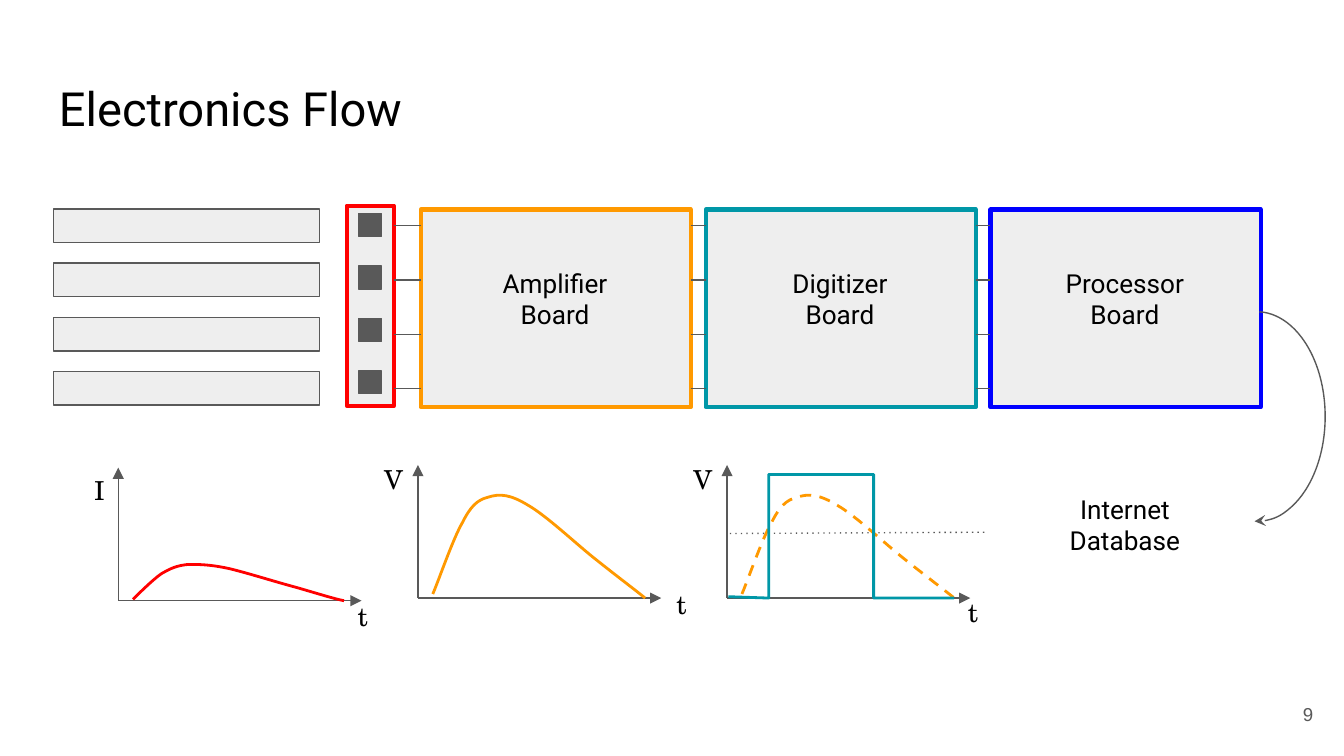
from pptx import Presentation
from pptx.dml.color import RGBColor as RGB
from pptx.enum.shapes import MSO_CONNECTOR as Link, MSO_SHAPE as Kind
from pptx.enum.text import MSO_ANCHOR as Anchor, PP_ALIGN as Align
from pptx.oxml.ns import qn
from pptx.util import Inches, Pt
from lxml import etree

THEME = {
    "ink": "000000", "gray": "595959", "pale": "EEEEEE",
    "red": "FF0000", "gold": "FF9900", "teal": "0097A7", "blue": "0000FF",
    "thin": 0.75, "curve": 1.5, "thick": 2.25,
    "title": {"name": "Roboto", "size": 25.2, "color": "ink", "align": Align.LEFT},
    "body": {"name": "Roboto", "size": 14, "color": "ink", "align": Align.CENTER},
    "axis": {"name": "TeX Gyre Schola", "size": 14, "color": "ink", "align": Align.CENTER},
    "page": {"name": "Arial", "size": 10, "color": "gray", "align": Align.RIGHT},
}
FRAME = {"word_wrap": True, **{
    f"margin_{side}": Inches(0.1) for side in ("left", "top", "right", "bottom")}}

TEXTS = [
    ("Electronics Flow", "title", (0.34, 0.49, 9.32, 0.63), Anchor.TOP),
    ("9", "page", (9.27, 5.1, 0.6, 0.43), Anchor.MIDDLE),
    ("Internet Database", "body", (7.86, 3.57, 1.02, 0.99), Anchor.TOP),
]
BOARDS = [("Amplifier Board", "gold"), ("Digitizer Board", "teal"), ("Processor Board", "blue")]
PLOTS = [
    {"at": (0.88, 4.47), "name": "I", "name_at": (0.6, 3.44), "time_at": (2.56, 4.38)},
    {"at": (3.11, 4.45), "name": "V", "name_at": (2.76, 3.36), "time_at": (4.93, 4.29)},
    {"at": (5.41, 4.45), "name": "V", "name_at": (5.06, 3.36), "time_at": (7.1, 4.35)},
]
LOW = [
    (0.99, 4.46), (1.02, 4.43), (1.13, 4.32), (1.2, 4.27),
    (1.27, 4.23), (1.31, 4.21), (1.4, 4.2), (1.48, 4.2), (1.56, 4.2), (1.7, 4.23),
    (1.83, 4.26), (2.05, 4.33), (2.2, 4.37), (2.34, 4.41), (2.5, 4.46), (2.56, 4.47),
]
HIGH = [
    (3.22, 4.42), (3.26, 4.33), (3.37, 4.01), (3.44, 3.89),
    (3.5, 3.77), (3.55, 3.72), (3.63, 3.7), (3.72, 3.67), (3.8, 3.68), (3.93, 3.76),
    (4.07, 3.84), (4.29, 4.05), (4.43, 4.16), (4.58, 4.28), (4.74, 4.4), (4.8, 4.45),
]
SHIFT = 2.3
PULSE = [(5.42, 4.44), (5.72, 4.45), (5.72, 3.53), (6.5, 3.53), (6.5, 4.45), (7.1, 4.45)]

ROWS = [1.68 + 1.21 / 3 * i for i in range(4)]
BAR = (0.4, 1.98, 0.25)
SENSOR = (2.58, 1.53, 0.35, 1.49)
CHIP = (2.67, 1.59, 0.17, 0.39)
BOARD = (3.13, 1.56, 2.01, 1.47)
STEP = 2.12

deck = Presentation()
deck.slide_width = Inches(10)
deck.slide_height = deck.slide_width * 9 // 16
slide = deck.slides.add_slide(deck.slide_layouts[6])
shapes = slide.shapes


def tint(name):
    return RGB.from_string(THEME[name])


def stroke(item, color, width, dash=None, tip=None):
    item.line.color.rgb = tint(color)
    item.line.width = Pt(THEME[width])
    line = item.line._get_or_add_ln()
    if dash:
        etree.SubElement(line, qn("a:prstDash"), val=dash)
    if tip:
        etree.SubElement(line, qn("a:tailEnd"), type=tip)


def block(box, fill, color, width, kind=Kind.RECTANGLE, tip=None):
    item = shapes.add_shape(kind, *map(Inches, box))
    item.shadow.inherit = False
    if fill:
        item.fill.solid()
        item.fill.fore_color.rgb = tint(fill)
    else:
        item.fill.background()
    stroke(item, color, width, tip=tip)
    return item


def wire(start, end, dash=None, tip=None):
    item = shapes.add_connector(Link.STRAIGHT, *map(Inches, start + end))
    stroke(item, "gray", "thin", dash, tip)
    etree.SubElement(item._element.spPr, qn("a:effectLst"))


def trace(points, color, dash=None, curved=True):
    spots = [(Inches(x), Inches(y)) for x, y in points]
    build = shapes.build_freeform(*spots[0])
    build.add_line_segments(spots[1:], close=False)
    item = build.convert_to_shape()
    item.shadow.inherit = False
    item.fill.background()
    stroke(item, color, "curve", dash)
    if curved:
        route = next(item._element.iter(qn("a:path")))
        legs = route.findall(qn("a:lnTo"))
        for i in range(0, len(legs), 3):
            bend = etree.SubElement(route, qn("a:cubicBezTo"))
            for leg in legs[i:i + 3]:
                bend.append(leg[0])
                route.remove(leg)


def label(text, style, box, anchor=Anchor.TOP):
    frame = shapes.add_textbox(*map(Inches, box)).text_frame
    for key, value in {**FRAME, "vertical_anchor": anchor}.items():
        setattr(frame, key, value)
    look = THEME[style]
    para = frame.paragraphs[0]
    para.alignment = look["align"]
    run = para.add_run()
    run.text = text
    for key, value in {"name": look["name"], "size": Pt(look["size"])}.items():
        setattr(run.font, key, value)
    run.font.color.rgb = tint(look["color"])


for entry in TEXTS:
    label(*entry)

left, wide, tall = BAR
for y in ROWS:
    block((left, y - tall / 2, wide, tall), "pale", "gray", "thin")

block(SENSOR, "pale", "red", "thick")
left, top, side, gap = CHIP
for i in range(len(ROWS)):
    block((left, top + i * gap, side, side), "gray", "gray", "thin")

left, top, wide, tall = BOARD
edge = SENSOR[0] + SENSOR[2]
for i, (name, color) in enumerate(BOARDS):
    x = left + i * STEP
    block((x, top, wide, tall), "pale", color, "thick")
    for y in ROWS:
        wire((edge, y), (x, y))
    label(name, "body", (x + 0.42, top + 0.33, 1.16, 0.76))
    edge = x + wide

for plot in PLOTS:
    x, y = plot["at"]
    wire((x, y), (x, y - 0.99), tip="triangle")
    wire((x, y), (x + 1.81, y), tip="triangle")
    label(plot["name"], "axis", plot["name_at"] + (0.28, 0.19))
    label("t", "axis", plot["time_at"] + (0.28, 0.19))

trace(LOW, "red")
trace(HIGH, "gold")
trace([(x + SHIFT, y) for x, y in HIGH], "gold", "dash")
wire((5.43, 3.97), (7.34, 3.96), "dot")
trace(PULSE, "teal", curved=False)

arc = block((8.84, 2.32, 1.02, 1.56), None, "gray", "thin", Kind.ARC, "stealth")
arc.adjustments[0], arc.adjustments[1] = 162.94, 54.7

deck.save("out.pptx")
